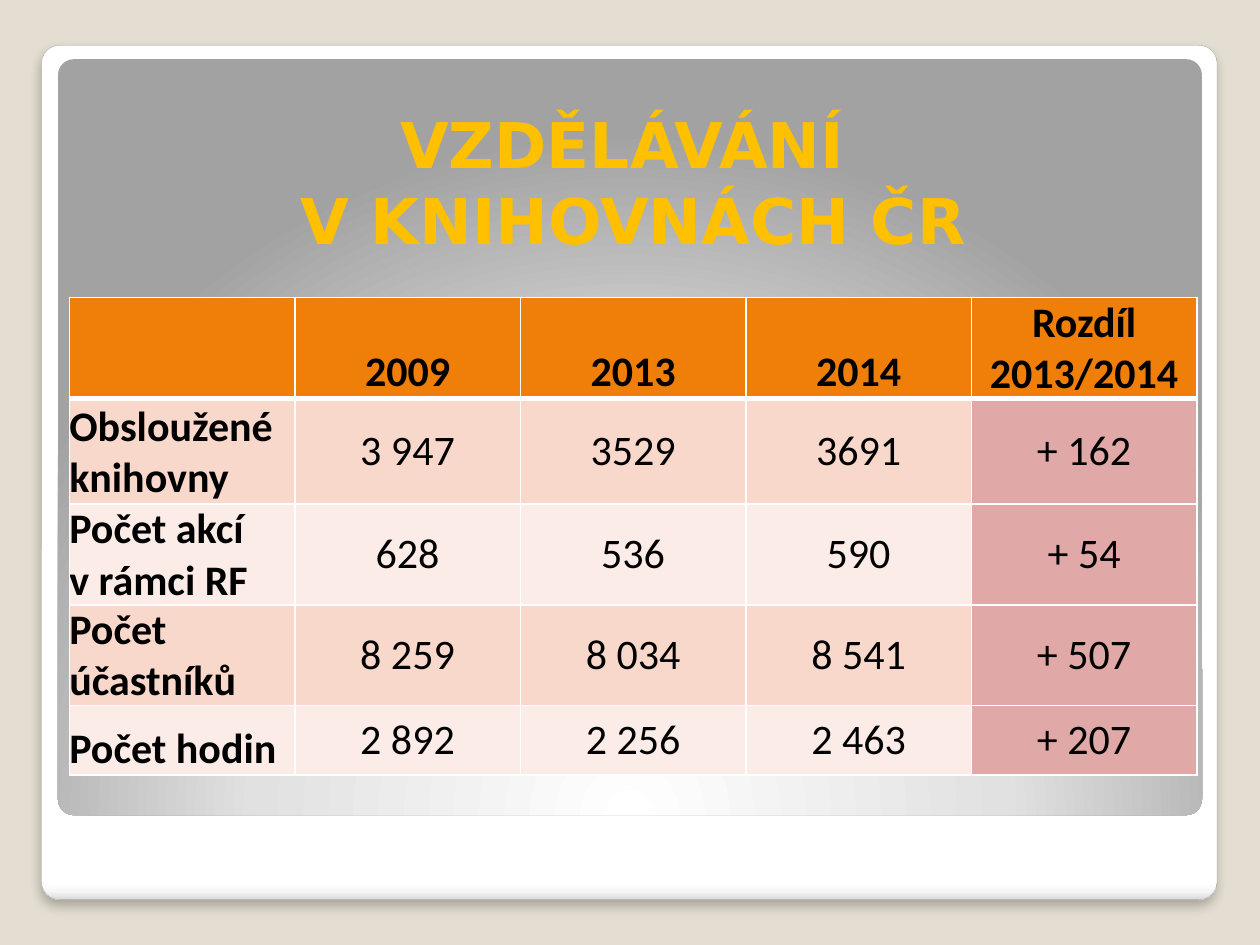
from pptx import Presentation
from pptx.dml.color import RGBColor
from pptx.enum.shapes import MSO_SHAPE
from pptx.enum.text import MSO_ANCHOR, PP_ALIGN
from pptx.oxml import parse_xml
from pptx.oxml.ns import nsdecls, qn
from pptx.util import Inches, Pt

ROUNDED = MSO_SHAPE.ROUNDED_RECTANGLE
CENTER, LEFT = PP_ALIGN.CENTER, PP_ALIGN.LEFT
MIDDLE, BOTTOM = MSO_ANCHOR.MIDDLE, MSO_ANCHOR.BOTTOM

WIDTH, HEIGHT = 10, 7.5
CONTENT_LEFT, CONTENT_WIDTH = 0.55, 8.95
WHITE, BLACK, GOLD = "FFFFFF", "000000", "FFC000"
HEADER_FILL, DIFFERENCE_FILL = "F07F09", "E0A9A8"
BAND_FILLS = ("F9D8CC", "FCECE7")

ROW_HEIGHTS = (0.78, 0.84, 0.78, 0.78, 0.55)
ROWS = (
    ("", "2009", "2013", "2014", "Rozdíl 2013/2014"),
    ("Obsloužené knihovny", "3 947", "3529", "3691", "+ 162"),
    ("Počet akcí\nv rámci RF", "628", "536", "590", "+ 54"),
    ("Počet účastníků", "8 259", "8 034", "8 541", "+ 507"),
    ("Počet hodin", "2 892", "2 256", "2 463", "+ 207"),
)


def color(hex_text):
    return RGBColor.from_string(hex_text)


def format_text(text_frame, font_name, size, hex_text, bold, alignment):
    for paragraph in text_frame.paragraphs:
        paragraph.alignment = alignment
        for run in paragraph.runs:
            run.font.name = font_name
            run.font.size = Pt(size)
            run.font.bold = bold
            run.font.color.rgb = color(hex_text)


def add_panel(slide, left, top, width, height, stops, direction):
    """Add a rounded panel with gradient stops given as (percent, colour)."""
    shape = slide.shapes.add_shape(
        ROUNDED, Inches(left), Inches(top), Inches(width), Inches(height))
    shape.adjustments[0] = 0.021
    shape.shadow.inherit = False
    shape.line.fill.background()
    shape.fill.gradient()
    properties = shape._element.spPr
    stop_xml = "".join(
        f'<a:gs pos="{percent * 1000}"><a:srgbClr val="{hex_text}"/></a:gs>'
        for percent, hex_text in stops)
    gradient = parse_xml(
        f'<a:gradFill {nsdecls("a")} rotWithShape="1">'
        f"<a:gsLst>{stop_xml}</a:gsLst>{direction}</a:gradFill>")
    properties.replace(properties.find(qn("a:gradFill")), gradient)
    return shape


def add_shadow(shape, blur, distance, alpha):
    effects = shape._element.spPr.find(qn("a:effectLst"))
    effects.append(parse_xml(
        f'<a:outerShdw {nsdecls("a")} blurRad="{Pt(blur)}" dist="{Pt(distance)}" '
        f'dir="5400000" algn="t" rotWithShape="0"><a:srgbClr val="{BLACK}">'
        f'<a:alpha val="{alpha * 1000}"/></a:srgbClr></a:outerShdw>'))


def add_frame(slide):
    # Outer white card
    card = add_panel(
        slide, 0.33, 0.36, 9.33, 6.78,
        ((0, WHITE), (98, WHITE), (99, "F7F7F7"), (100, "DADADA")),
        '<a:lin ang="5400000" scaled="0"/>')
    card.line.color.rgb = color("A4A4A4")
    card.line.width = Pt(0.16)
    add_shadow(card, blur=6, distance=4, alpha=25)
    # Inner grey panel, lit from below
    add_panel(
        slide, 0.46, 0.47, 9.08, 6,
        ((0, WHITE), (55, "E1E1E1"), (100, "A2A2A2")),
        '<a:path path="circle"><a:fillToRect l="50000" t="175000" '
        'r="50000" b="-75000"/></a:path>')


def add_title(slide, text):
    box = slide.shapes.add_textbox(
        Inches(CONTENT_LEFT), Inches(0.44), Inches(CONTENT_WIDTH), Inches(1.65))
    text_frame = box.text_frame
    text_frame.word_wrap = True
    text_frame.vertical_anchor = BOTTOM
    text_frame.text = text
    format_text(text_frame, "DejaVu Sans", 36, GOLD, True, CENTER)


def set_borders(cell, top, bottom):
    widths = {"lnL": 1, "lnR": 1, "lnT": top, "lnB": bottom}
    properties = cell._tc.get_or_add_tcPr()
    for side, width in widths.items():
        properties.append(parse_xml(
            f'<a:{side} {nsdecls("a")} w="{Pt(width)}"><a:solidFill>'
            f'<a:srgbClr val="{WHITE}"/></a:solidFill></a:{side}>'))


def cell_fill(row, column):
    if row == 0:
        return HEADER_FILL
    if column == len(ROWS[0]) - 1:
        return DIFFERENCE_FILL
    return BAND_FILLS[(row - 1) % 2]


def fill_cell(cell, row, column, text):
    is_label = row == 0 or column == 0
    set_borders(cell, top=3 if row == 1 else 1, bottom=3 if row == 0 else 1)
    cell.fill.solid()
    cell.fill.fore_color.rgb = color(cell_fill(row, column))
    cell.margin_left = cell.margin_right = cell.margin_top = cell.margin_bottom = 0
    cell.vertical_anchor = BOTTOM if is_label else MIDDLE
    cell.text_frame.text = text
    format_text(cell.text_frame, "Calibri", 24, BLACK, is_label,
                LEFT if column == 0 else CENTER)


def add_statistics_table(slide):
    column_count = len(ROWS[0])
    table = slide.shapes.add_table(
        len(ROWS), column_count, Inches(CONTENT_LEFT), Inches(2.36),
        Inches(CONTENT_WIDTH), Inches(sum(ROW_HEIGHTS))).table
    for column in table.columns:
        column.width = Inches(CONTENT_WIDTH / column_count)
    for row, (height, texts) in enumerate(zip(ROW_HEIGHTS, ROWS)):
        table.rows[row].height = Inches(height)
        for column, text in enumerate(texts):
            fill_cell(table.cell(row, column), row, column, text)


def main():
    presentation = Presentation()
    presentation.slide_width = Inches(WIDTH)
    presentation.slide_height = Inches(HEIGHT)
    slide = presentation.slides.add_slide(presentation.slide_layouts[6])
    slide.background.fill.solid()
    slide.background.fill.fore_color.rgb = color("E3DED1")

    add_frame(slide)
    add_title(slide, "VZDĚLÁVÁNÍ \vV KNIHOVNÁCH ČR")
    add_statistics_table(slide)
    presentation.save("out.pptx")


if __name__ == "__main__":
    main()
